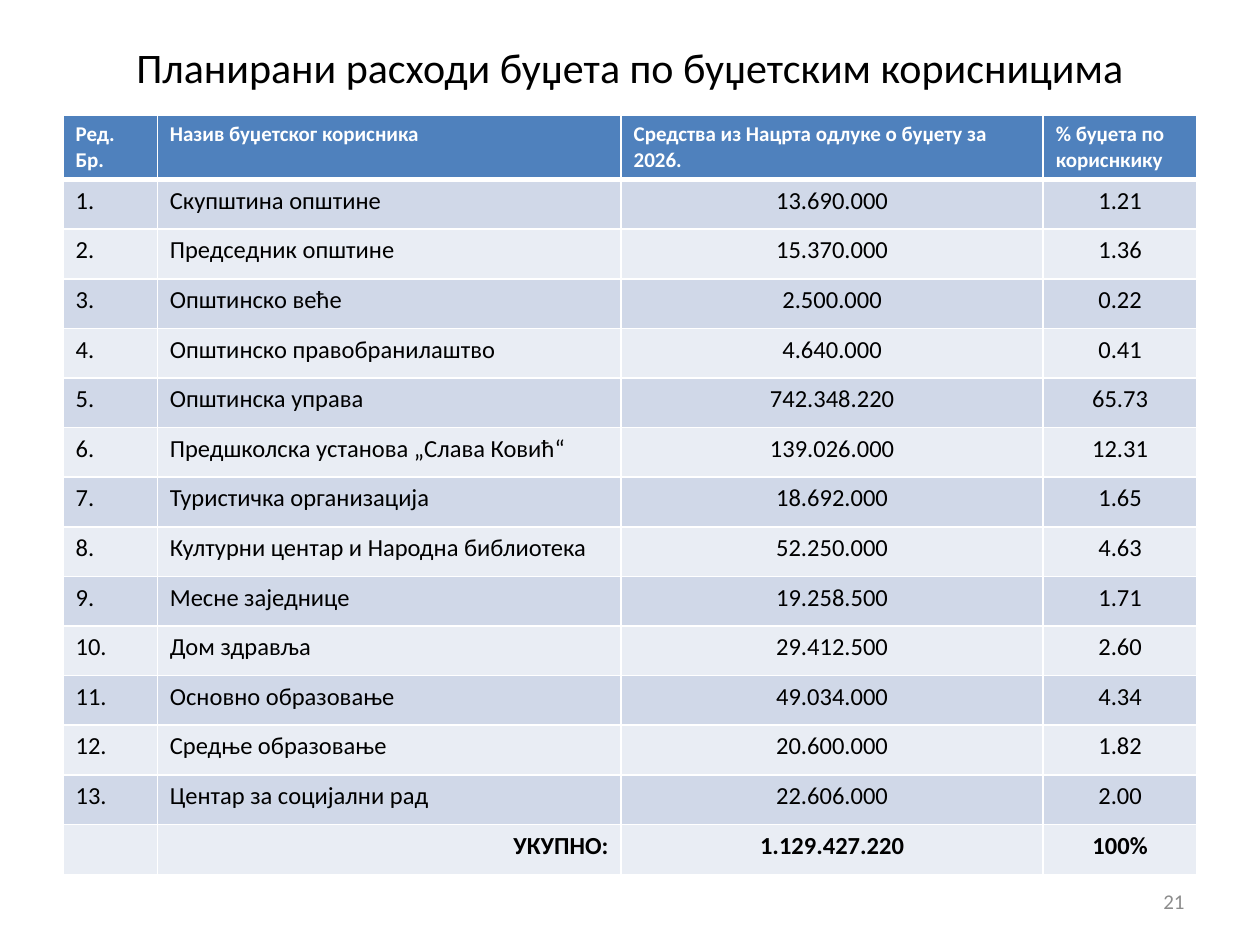
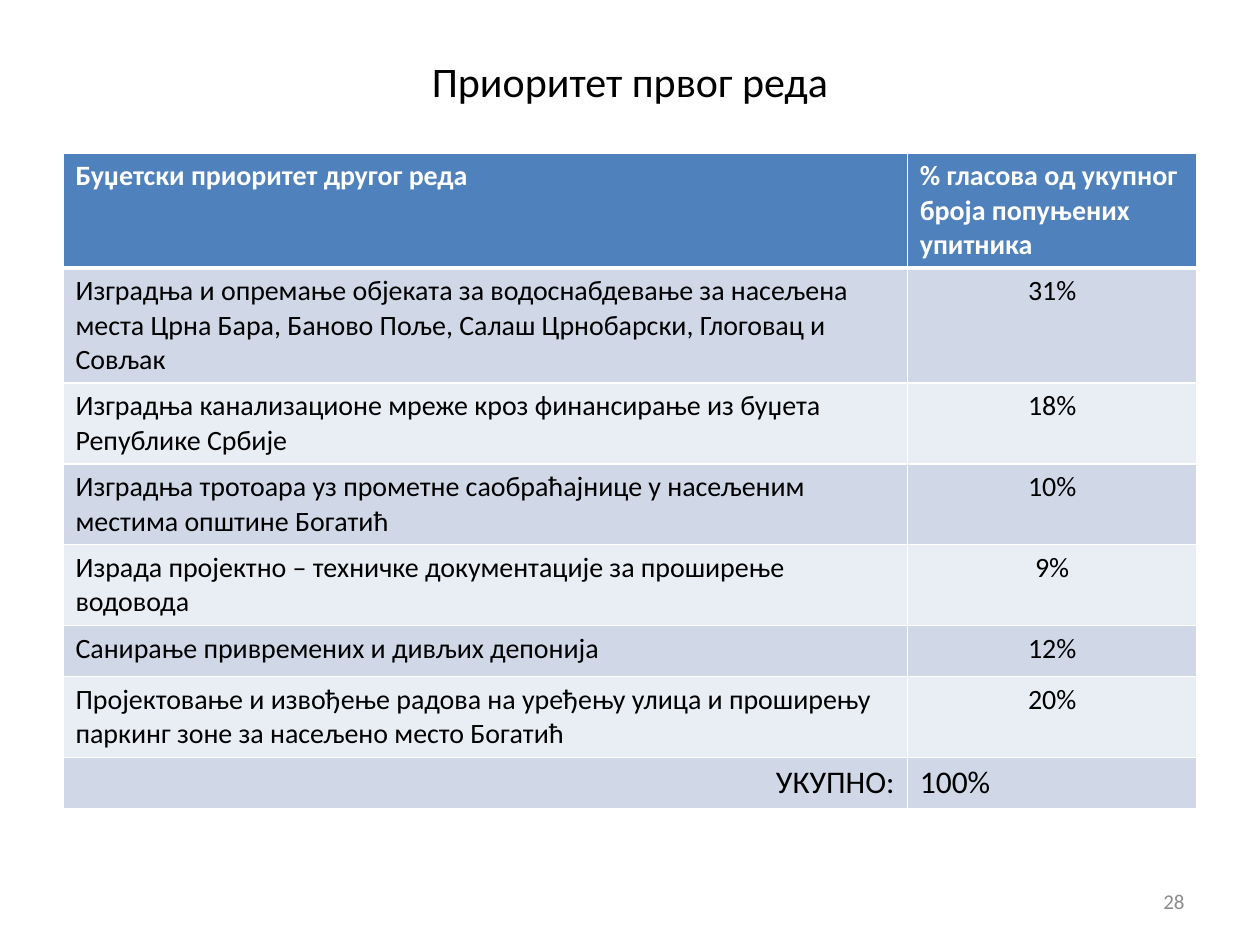
from dataclasses import dataclass

import lxml.etree
import pptx
import pptx.dml.color
import pptx.enum.text
import pptx.oxml.ns
import pptx.slide
import pptx.table
import pptx.util

Cm = pptx.util.Cm
Pt = pptx.util.Pt
RGBColor = pptx.dml.color.RGBColor
ALIGN = pptx.enum.text.PP_ALIGN
LEFT, CENTER, RIGHT = ALIGN.LEFT, ALIGN.CENTER, ALIGN.RIGHT

FONT = "Calibri"
COLORS = {
    "text": "000000",
    "header": "4F81BD",
    "header_text": "FFFFFF",
    "border": "FFFFFF",
    "band_dark": "D0D8E8",
    "band_light": "E9EDF4",
    "number": "8C8C8C",
}
MARGIN = 1.27
CONTENT_WIDTH = 22.86


@dataclass
class TextStyle:
    size: int
    color: str = "text"
    bold: bool = False


@dataclass
class TableSlide:
    title: str
    title_height: float
    number: int
    top: float
    col_widths: list[float]
    row_heights: list[float]
    rows: list[tuple[str, ...]]
    aligns: list[ALIGN]
    total_aligns: list[ALIGN]
    header: TextStyle
    body: TextStyle
    total: TextStyle


BUDGET_USERS = [
    ("Скупштина општине", "13.690.000", "1.21"),
    ("Председник општине", "15.370.000", "1.36"),
    ("Општинско веће", "2.500.000", "0.22"),
    ("Општинско правобранилаштво", "4.640.000", "0.41"),
    ("Општинска управа", "742.348.220", "65.73"),
    ("Предшколска установа „Слава Ковић“", "139.026.000", "12.31"),
    ("Туристичка организација", "18.692.000", "1.65"),
    ("Културни центар и Народна библиотека", "52.250.000", "4.63"),
    ("Месне заједнице", "19.258.500", "1.71"),
    ("Дом здравља", "29.412.500", "2.60"),
    ("Основно образовање", "49.034.000", "4.34"),
    ("Средње образовање", "20.600.000", "1.82"),
    ("Центар за социјални рад", "22.606.000", "2.00"),
]

PRIORITIES = [
    ("Изградња и опремање објеката за водоснабдевање за насељена места "
     "Црна Бара, Баново Поље, Салаш Црнобарски, Глоговац и Совљак", "31%"),
    ("Изградња канализационе мреже кроз финансирање из буџета "
     "Републике Србије", "18%"),
    ("Изградња тротоара уз прометне саобраћајнице у насељеним местима "
     "општине Богатић", "10%"),
    ("Израда пројектно – техничке документације за проширење водовода", "9%"),
    ("Санирање привремених и дивљих депонија", "12%"),
    ("Пројектовање и извођење радова на уређењу улица и проширењу "
     "паркинг зоне за насељено место Богатић", "20%"),
]

ONE_LINE, TWO_LINES, THREE_LINES = 1.03, 1.63, 2.32

SLIDES = [
    TableSlide(
        title="Планирани расходи буџета по буџетским корисницима",
        title_height=1.17,
        number=21,
        top=2.33,
        col_widths=[1.9, 9.35, 8.51, 3.1],
        row_heights=[1.29] + [1.0] * (len(BUDGET_USERS) + 1),
        rows=[
            ("Ред. Бр.", "Назив буџетског корисника",
             "Средства из Нацрта одлуке о буџету за 2026.",
             "% буџета по кориснкику"),
            *((f"{i}.", *user) for i, user in enumerate(BUDGET_USERS, 1)),
            ("", "УКУПНО:", "1.129.427.220", "100%"),
        ],
        aligns=[LEFT, LEFT, CENTER, CENTER],
        total_aligns=[LEFT, RIGHT, CENTER, CENTER],
        header=TextStyle(12, "header_text", True),
        body=TextStyle(14),
        total=TextStyle(14, bold=True),
    ),
    TableSlide(
        title="Приоритет првог реда",
        title_height=1.75,
        number=28,
        top=3.08,
        col_widths=[17.02, 5.84],
        row_heights=[THREE_LINES, THREE_LINES, TWO_LINES, TWO_LINES,
                     TWO_LINES, ONE_LINE, TWO_LINES, ONE_LINE],
        rows=[
            ("Буџетски приоритет другог реда",
             "% гласова од укупног броја попуњених упитника"),
            *PRIORITIES,
            ("УКУПНО:", "100%"),
        ],
        aligns=[LEFT, CENTER],
        total_aligns=[RIGHT, LEFT],
        header=TextStyle(16, "header_text", True),
        body=TextStyle(16),
        total=TextStyle(18),
    ),
]


def rgb(name: str) -> RGBColor:
    return RGBColor.from_string(COLORS[name])


def write(tf: pptx.text.text.TextFrame, text: str, style: TextStyle,
          align: ALIGN) -> None:
    p = tf.paragraphs[0]
    p.alignment = align
    r = p.add_run()
    r.text = text
    r.font.name = FONT
    r.font.size = Pt(style.size)
    r.font.bold = style.bold
    r.font.color.rgb = rgb(style.color)


def add_text(slide: pptx.slide.Slide, box: tuple[float, ...], text: str,
             style: TextStyle, align: ALIGN) -> None:
    """Add a vertically centred text box; box is left, top, width, height."""
    tf = slide.shapes.add_textbox(*map(Cm, box)).text_frame
    tf.word_wrap = True
    tf.vertical_anchor = pptx.enum.text.MSO_ANCHOR.MIDDLE
    write(tf, text, style, align)


def set_borders(cell: pptx.table._Cell, top: int, bottom: int) -> None:
    """Draw the borders, 1 pt at the sides; call before filling the cell."""
    qn = pptx.oxml.ns.qn
    tc_pr = cell._tc.get_or_add_tcPr()
    for side, width in (("L", 1), ("R", 1), ("T", top), ("B", bottom)):
        ln = lxml.etree.SubElement(tc_pr, qn(f"a:ln{side}"), w=str(Pt(width)))
        fill = lxml.etree.SubElement(ln, qn("a:solidFill"))
        lxml.etree.SubElement(fill, qn("a:srgbClr"), val=COLORS["border"])


def add_table(slide: pptx.slide.Slide, data: TableSlide) -> None:
    table = slide.shapes.add_table(
        len(data.rows), len(data.col_widths), Cm(MARGIN), Cm(data.top),
        Cm(CONTENT_WIDTH), Cm(sum(data.row_heights))).table
    for col, width in zip(table.columns, data.col_widths):
        col.width = Cm(width)
    for row, height in zip(table.rows, data.row_heights):
        row.height = Cm(height)

    last = len(data.rows) - 1
    for i, texts in enumerate(data.rows):
        style, aligns = data.body, data.aligns
        fill = "band_dark" if i % 2 else "band_light"
        if i == 0:
            style, aligns = data.header, [LEFT] * len(texts)
            fill = "header"
        elif i == last:
            style, aligns = data.total, data.total_aligns
        for j, (text, align) in enumerate(zip(texts, aligns)):
            cell = table.cell(i, j)
            set_borders(cell, top=3 if i == 1 else 1, bottom=3 if i == 0 else 1)
            cell.fill.solid()
            cell.fill.fore_color.rgb = rgb(fill)
            write(cell.text_frame, text, style, align)


def main() -> None:
    prs = pptx.Presentation()
    prs.slide_width, prs.slide_height = Cm(25.4), Cm(19.05)
    for data in SLIDES:
        slide = prs.slides.add_slide(prs.slide_layouts[6])
        add_text(slide, (MARGIN, 0.76, CONTENT_WIDTH, data.title_height),
                 data.title, TextStyle(24), CENTER)
        add_table(slide, data)
        add_text(slide, (18.2, 17.66, 5.93, 1.01), str(data.number),
                 TextStyle(12, "number"), RIGHT)
    prs.save("out.pptx")


if __name__ == "__main__":
    main()
